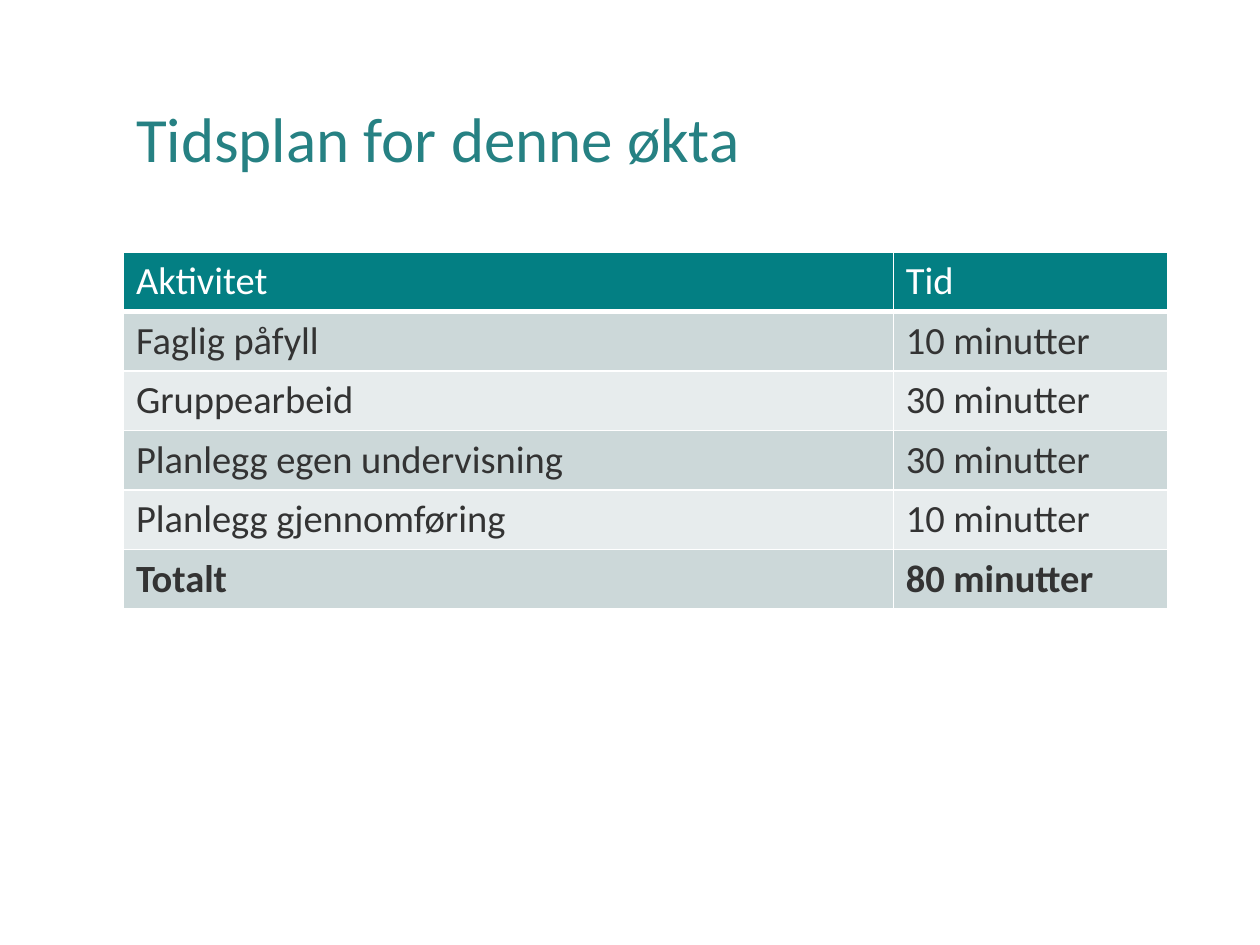
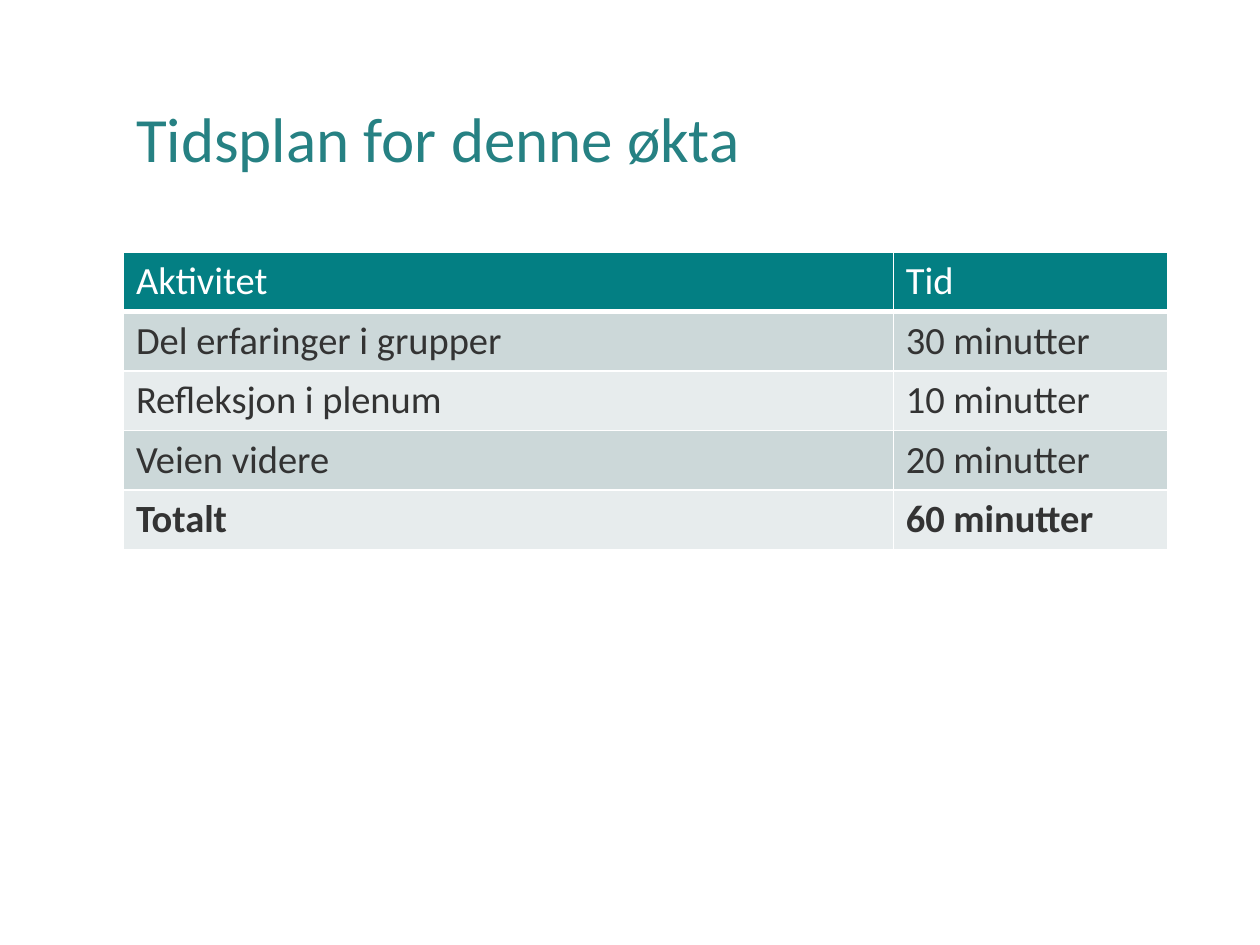
from typing import NamedTuple

from lxml.etree import SubElement
from pptx import Presentation
from pptx.dml.color import RGBColor
from pptx.enum.text import MSO_ANCHOR, MSO_AUTO_SIZE, PP_ALIGN
from pptx.oxml.ns import qn
from pptx.util import Inches, Pt

SLIDE_WIDTH, SLIDE_HEIGHT = Inches(10), Inches(7.5)
LEFT = Inches(0.98)
ACTIVITY_WIDTH, TIME_WIDTH = Inches(6.11), Inches(2.18)
CONTENT_WIDTH = ACTIVITY_WIDTH + TIME_WIDTH
TITLE_TOP, TITLE_HEIGHT = Inches(0.4), Inches(1.45)
TABLE_TOP, ROW_HEIGHT = Inches(2), Inches(0.47)

FONT = "Calibri"
TITLE_COLOR = RGBColor(0x26, 0x81, 0x83)
HEADER_FILL = RGBColor(0x03, 0x7F, 0x83)
BAND_FILLS = (RGBColor(0xCC, 0xD8, 0xD9), RGBColor(0xE7, 0xEC, 0xED))
TEXT_COLOR = RGBColor(0x33, 0x33, 0x33)
WHITE = RGBColor(0xFF, 0xFF, 0xFF)


class Activity(NamedTuple):
    name: str
    minutes: int


class Schedule(NamedTuple):
    title: str
    activities: tuple[Activity, ...]


class CellStyle(NamedTuple):
    fill: RGBColor
    color: RGBColor
    bold: bool
    top: int
    bottom: int


SCHEDULES = (
    Schedule("Tidsplan for denne økta", (
        Activity("Faglig påfyll", 10),
        Activity("Gruppearbeid", 30),
        Activity("Planlegg egen undervisning", 30),
        Activity("Planlegg gjennomføring", 10),
    )),
    Schedule("Tidsplan for denne økta", (
        Activity("Del erfaringer i grupper", 30),
        Activity("Refleksjon i plenum", 10),
        Activity("Veien videre", 20),
    )),
)


def add_span(para, text: str, size: int, color: RGBColor, bold: bool = False) -> None:
    span = para.add_run()
    span.text = text
    span.font.name = FONT
    span.font.size = Pt(size)
    span.font.bold = bold
    span.font.color.rgb = color


def add_title(page, text: str) -> None:
    box = page.shapes.title
    box.left, box.top = LEFT, TITLE_TOP
    box.width, box.height = CONTENT_WIDTH, TITLE_HEIGHT
    frame = box.text_frame
    frame.word_wrap = True
    frame.auto_size = MSO_AUTO_SIZE.NONE
    frame.vertical_anchor = MSO_ANCHOR.MIDDLE
    para = frame.paragraphs[0]
    para.alignment = PP_ALIGN.LEFT
    para.line_spacing = 0.9
    add_span(para, text, 36, TITLE_COLOR)


def add_borders(cell, top: int, bottom: int) -> None:
    properties = cell._tc.get_or_add_tcPr()
    for side, width in (("L", 1), ("R", 1), ("T", top), ("B", bottom)):
        line = SubElement(properties, qn(f"a:ln{side}"), w=str(Pt(width)))
        fill = SubElement(line, qn("a:solidFill"))
        SubElement(fill, qn("a:srgbClr"), val=str(WHITE))


def row_style(index: int, last: int) -> CellStyle:
    if index == 0:
        return CellStyle(HEADER_FILL, WHITE, False, 1, 3)
    band = BAND_FILLS[(index - 1) % len(BAND_FILLS)]
    return CellStyle(band, TEXT_COLOR, index == last, 3 if index == 1 else 1, 1)


def fill_cell(cell, text: str, style: CellStyle) -> None:
    add_borders(cell, style.top, style.bottom)
    cell.fill.solid()
    cell.fill.fore_color.rgb = style.fill
    add_span(cell.text_frame.paragraphs[0], text, 22, style.color, style.bold)


def add_timetable(page, activities: tuple[Activity, ...]) -> None:
    total = Activity("Totalt", sum(activity.minutes for activity in activities))
    rows = [("Aktivitet", "Tid")]
    rows += [(name, f"{minutes} minutter") for name, minutes in (*activities, total)]
    table = page.shapes.add_table(
        len(rows), 2, LEFT, TABLE_TOP, CONTENT_WIDTH, ROW_HEIGHT * len(rows)
    ).table
    for column, width in zip(table.columns, (ACTIVITY_WIDTH, TIME_WIDTH)):
        column.width = width
    for index, texts in enumerate(rows):
        table.rows[index].height = ROW_HEIGHT
        style = row_style(index, len(rows) - 1)
        for column, text in enumerate(texts):
            fill_cell(table.cell(index, column), text, style)


def main() -> None:
    deck = Presentation()
    deck.slide_width, deck.slide_height = SLIDE_WIDTH, SLIDE_HEIGHT
    title_only = deck.slide_layouts.get_by_name("Title Only")
    for schedule in SCHEDULES:
        page = deck.slides.add_slide(title_only)
        add_title(page, schedule.title)
        add_timetable(page, schedule.activities)
    deck.save("out.pptx")


if __name__ == "__main__":
    main()
